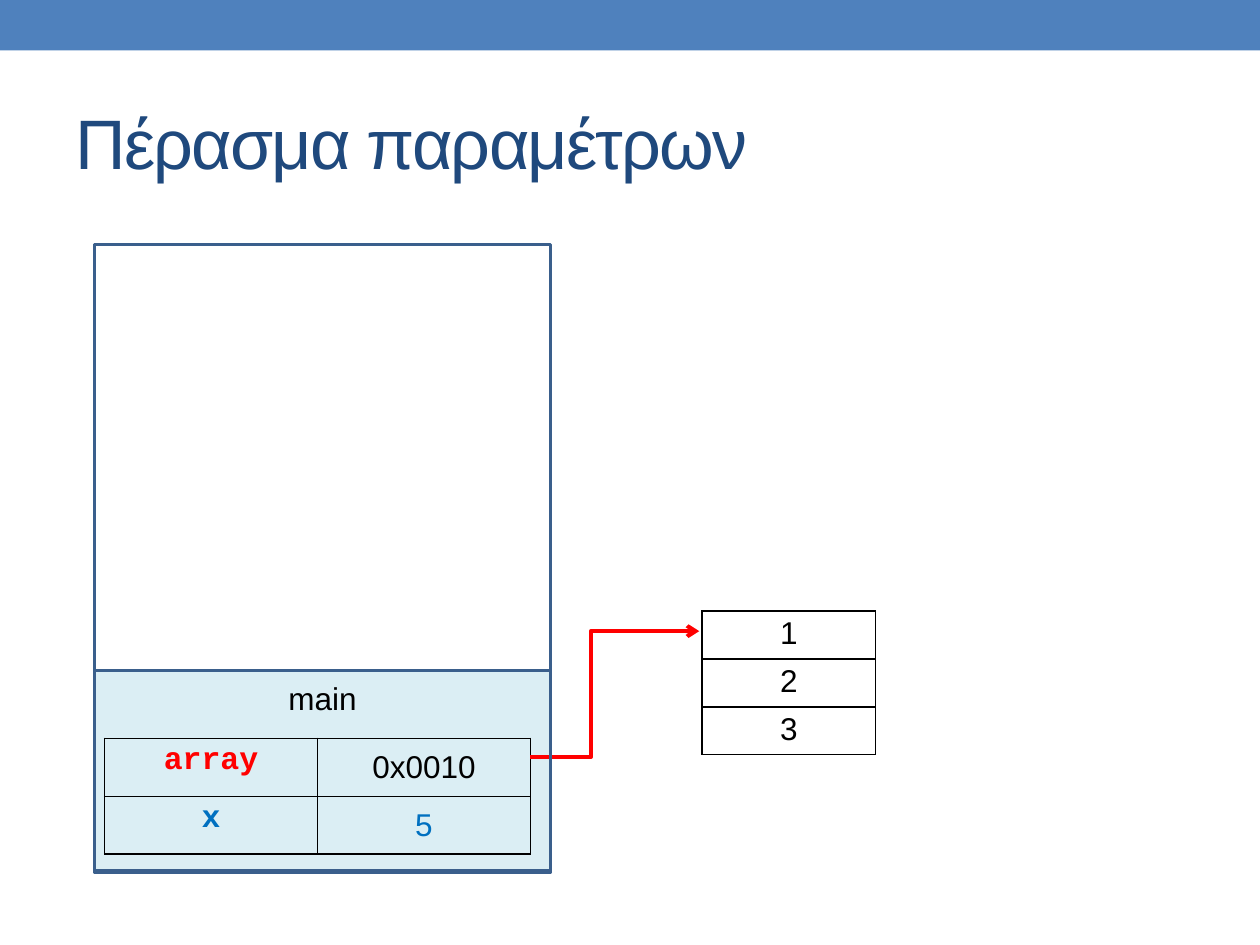
from pptx import Presentation
from pptx.dml.color import RGBColor
from pptx.enum.shapes import MSO_CONNECTOR as Link, MSO_SHAPE as Shape
from pptx.enum.text import MSO_ANCHOR as Anchor, PP_ALIGN as Align
from pptx.oxml import parse_xml
from pptx.oxml.ns import nsdecls
from pptx.util import Inches, Pt

BLACK, RED, BLUE, EDGE = "000000", "FF0000", "0070C0", "3A5F8C"


def rgb(code):
    return RGBColor.from_string(code)


def write(frame, text, size=18, color=BLACK, font="Arial", bold=False, align=Align.CENTER):
    par = frame.paragraphs[0]
    par.alignment = align
    run = par.add_run()
    run.text = text
    run.font.size = Pt(size)
    run.font.name = font
    run.font.bold = bold
    run.font.color.rgb = rgb(color)
    return run


deck = Presentation()
deck.slide_width, deck.slide_height = Inches(10), Inches(7.5)
slide = deck.slides.add_slide(deck.slide_layouts[6])
shapes = slide.shapes

# Top band, frame of main, whole stack
boxes = []
for left, top, width, height, fill, edge in [
    (0, 0, 10, 0.4, "4F81BD", None),
    (0.75, 5.32, 3.62, 1.59, "DBEEF4", EDGE),
    (0.75, 1.94, 3.62, 4.98, None, EDGE),
]:
    box = shapes.add_shape(Shape.RECTANGLE, Inches(left), Inches(top), Inches(width), Inches(height))
    box.shadow.inherit = False
    if fill:
        box.fill.solid()
        box.fill.fore_color.rgb = rgb(fill)
    else:
        box.fill.background()
    if edge:
        box.line.color.rgb = rgb(edge)
        box.line.width = Pt(2.08)
    else:
        box.line.fill.background()
    boxes.append(box)

main = boxes[1].text_frame
main.vertical_anchor = Anchor.TOP
main.margin_top = Inches(0.07)
write(main, "main")

# Title
title = shapes.add_textbox(Inches(0.5), Inches(0.58), Inches(9), Inches(1.08)).text_frame
title.word_wrap = True
title.vertical_anchor = Anchor.MIDDLE
run = write(title, "Πέρασμα παραμέτρων", 40, "1F497D", align=Align.LEFT)
run.font._element.set("spc", "-100")

# Variables of main, and the array they refer to
mono = "Courier New"
names = [
    [("array", RED, mono, True, Anchor.TOP), ("0x0010", BLACK, "Arial", False, Anchor.MIDDLE)],
    [("x", BLUE, mono, True, Anchor.TOP), ("5", BLUE, "Arial", False, Anchor.MIDDLE)],
]
items = [[(text, BLACK, "Arial", False, Anchor.TOP)] for text in "123"]

for rows, left, top, wide, high in [(names, 0.83, 5.86, 1.69, 0.46), (items, 5.57, 4.85, 1.38, 0.38)]:
    count = len(rows[0])
    grid = shapes.add_table(len(rows), count, Inches(left), Inches(top),
                            Inches(wide * count), Inches(high * len(rows))).table
    grid.first_row = grid.horz_banding = False
    for col in grid.columns:
        col.width = Inches(wide)
    for r, row in enumerate(rows):
        grid.rows[r].height = Inches(high)
        for c, (text, color, font, bold, anchor) in enumerate(row):
            cell = grid.cell(r, c)
            cell.margin_top = cell.margin_bottom = Inches(0.04)
            cell.vertical_anchor = anchor
            write(cell.text_frame, text, color=color, font=font, bold=bold)
            props = cell._tc.get_or_add_tcPr()
            for side in "LRTB":
                props.append(parse_xml(
                    f'<a:ln{side} {nsdecls("a")} w="12700"><a:solidFill>'
                    f'<a:srgbClr val="{BLACK}"/></a:solidFill></a:ln{side}>'))
            cell.fill.background()

# Arrow from the address to the first item
link = shapes.add_connector(Link.ELBOW, Inches(4.21), Inches(6.01), Inches(5.55), Inches(5.01))
link.line.color.rgb = rgb(RED)
link.line.width = Pt(2.25)
link.line._get_or_add_ln().append(parse_xml(f'<a:tailEnd {nsdecls("a")} type="arrow"/>'))
props = link._element.spPr
props.append(parse_xml(f'<a:effectLst {nsdecls("a")}/>'))
bend = props.prstGeom.get_or_add_avLst()
bend.append(parse_xml(f'<a:gd {nsdecls("a")} name="adj1" fmla="val 35800"/>'))

# The stack outline lies in front
shapes._spTree.append(boxes[2]._element)

deck.save("out.pptx")
